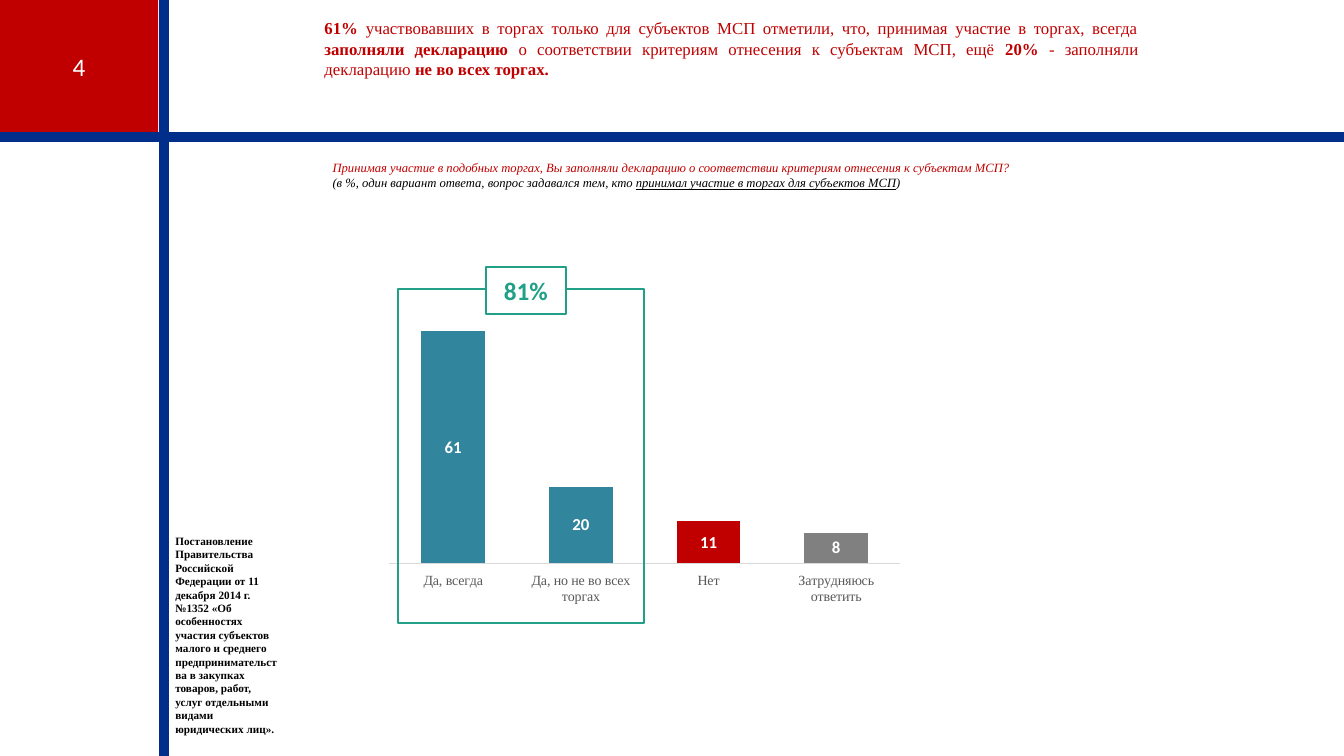
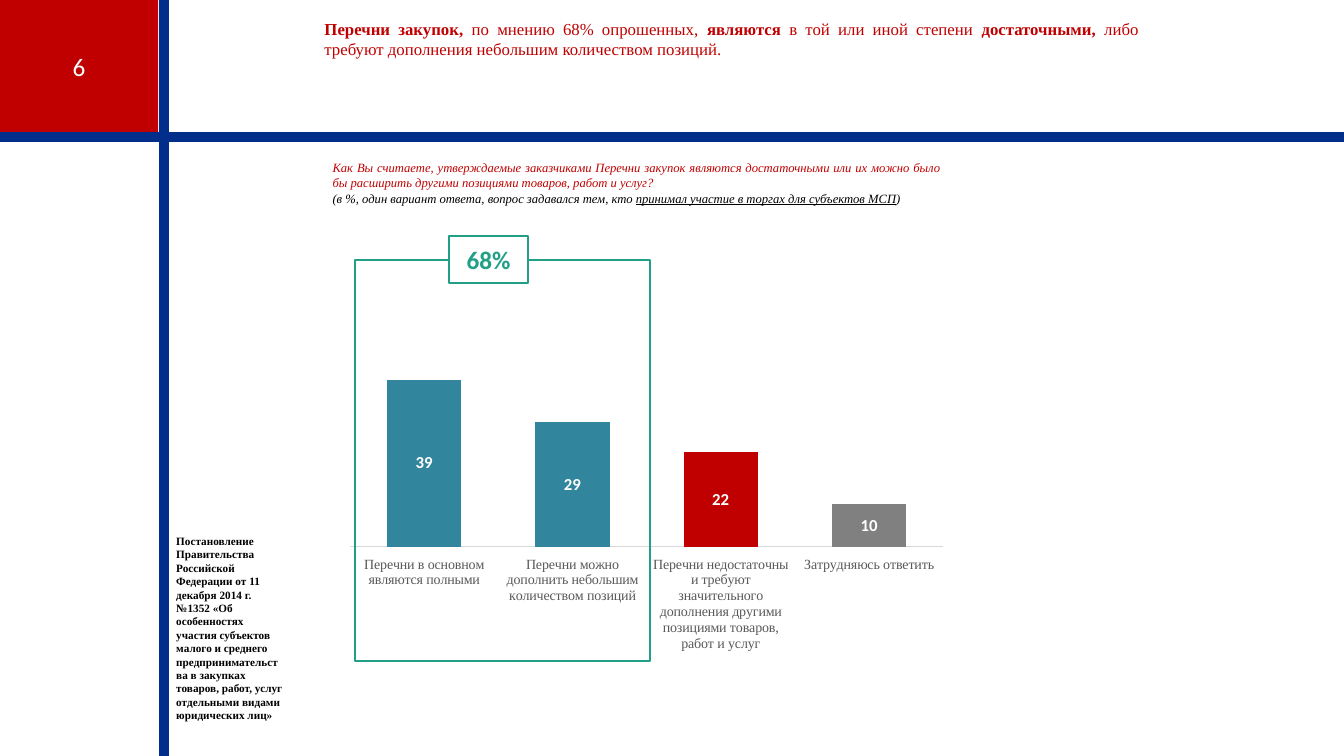
from dataclasses import dataclass
from typing import NamedTuple

from lxml.etree import SubElement
from pptx import Presentation
from pptx.chart.data import CategoryChartData
from pptx.dml.color import RGBColor
from pptx.enum.chart import XL_CHART_TYPE, XL_LABEL_POSITION, XL_TICK_LABEL_POSITION, XL_TICK_MARK
from pptx.enum.shapes import MSO_CONNECTOR, MSO_SHAPE
from pptx.enum.text import MSO_ANCHOR, MSO_AUTO_SIZE, PP_ALIGN
from pptx.oxml.ns import qn
from pptx.util import Inches, Pt


@dataclass(frozen=True)
class Theme:
    red: RGBColor = RGBColor(0xC0, 0x00, 0x00)
    navy: RGBColor = RGBColor(0x00, 0x2E, 0x8A)
    teal: RGBColor = RGBColor(0x31, 0x85, 0x9C)
    gray: RGBColor = RGBColor(0x80, 0x80, 0x80)
    green: RGBColor = RGBColor(0x21, 0x9F, 0x87)
    axis_line: RGBColor = RGBColor(0xD9, 0xD9, 0xD9)
    axis_text: RGBColor = RGBColor(0x59, 0x59, 0x59)
    black: RGBColor = RGBColor(0, 0, 0)
    white: RGBColor = RGBColor(0xFF, 0xFF, 0xFF)
    serif: str = "Times New Roman"
    sans: str = "Calibri"
    large_size: int = 18
    title_size: int = 12
    value_size: int = 12
    chart_size: int = 10
    question_size: int = 9
    source_size: int = 8
    band_width: int = 7
    frame_width: float = 1.5


THEME = Theme()


class Box(NamedTuple):
    left: float
    top: float
    width: float
    height: float


class Run(NamedTuple):
    text: str
    bold: bool = False
    underline: bool = False


class Plot(NamedTuple):
    """Inner plot area as fractions of the chart."""
    x: float
    y: float
    w: float
    h: float


class ChartSpec(NamedTuple):
    box: Box
    plot: Plot
    maximum: int
    answers: dict[str, int]


class Survey(NamedTuple):
    number: str
    title: list[Run]
    title_box: Box
    question: str
    question_box: Box
    chart: ChartSpec
    total: str
    total_frame: Box
    total_badge: Box
    source_box: Box
    source_end: str


SOURCE = (
    "Постановление Правительства Российской Федерации от 11 декабря 2014 г. №1352 "
    "«Об особенностях участия субъектов малого и среднего предпринимательства в закупках "
    "товаров, работ, услуг отдельными видами юридических лиц»"
)
QUESTION_NOTE = [
    Run("(в %, один вариант ответа, вопрос задавался тем, кто "),
    Run("принимал участие в торгах для субъектов МСП", underline=True),
    Run(")"),
]

SURVEYS = [
    Survey(
        number="4",
        title=[
            Run("61% ", bold=True),
            Run("участвовавших в торгах только для субъектов МСП отметили, что, "
                "принимая участие в торгах, всегда "),
            Run("заполняли декларацию ", bold=True),
            Run("о соответствии критериям отнесения к субъектам МСП, ещё "),
            Run("20%", bold=True),
            Run(" - заполняли декларацию "),
            Run("не во всех торгах.", bold=True),
        ],
        title_box=Box(3.12, 0.13, 8.27, 0.71),
        question="Принимая участие в подобных торгах, Вы заполняли декларацию "
                 "о соответствии критериям отнесения к субъектам МСП?",
        question_box=Box(3.2, 1.54, 8.19, 0.4),
        chart=ChartSpec(
            Box(3.82, 2.88, 5.37, 3.31), Plot(0.008, 0.021, 0.943, 0.797), 70,
            {"Да, всегда": 61, "Да, но не во всех торгах": 20,
             "Нет": 11, "Затрудняюсь ответить": 8},
        ),
        total="81%",
        total_frame=Box(3.95, 2.87, 2.44, 3.31),
        total_badge=Box(4.82, 2.65, 0.79, 0.47),
        source_box=Box(1.64, 5.25, 1.22, 2.12),
        source_end=".",
    ),
    Survey(
        number="6",
        title=[
            Run("Перечни закупок, ", bold=True),
            Run("по мнению 68% опрошенных, "),
            Run("являются", bold=True),
            Run(" в той или иной степени "),
            Run("достаточными, ", bold=True),
            Run("либо требуют дополнения небольшим количеством позиций."),
        ],
        title_box=Box(3.12, 0.14, 8.27, 0.5),
        question="Как Вы считаете, утверждаемые заказчиками Перечни закупок являются "
                 "достаточными или их можно было бы расширить другими позициями "
                 "товаров, работ и услуг?",
        question_box=Box(3.2, 1.54, 6.22, 0.56),
        chart=ChartSpec(
            Box(3.44, 3.36, 6.22, 3.43), Plot(0.005, 0.044, 0.946, 0.558), 45,
            {"Перечни в основном являются полными": 39,
             "Перечни можно дополнить небольшим количеством позиций": 29,
             "Перечни недостаточны и требуют значительного дополнения "
             "другими позициями товаров, работ и услуг": 22,
             "Затрудняюсь ответить": 10},
        ),
        total="68%",
        total_frame=Box(3.52, 2.58, 2.93, 3.98),
        total_badge=Box(4.45, 2.34, 0.79, 0.47),
        source_box=Box(1.65, 5.25, 1.26, 2.12),
        source_end="",
    ),
]


def inches(box: Box) -> list[int]:
    return [Inches(length) for length in box]


def set_font(font, size: float, color: RGBColor, name: str, bold: bool = False) -> None:
    font.size, font.name, font.bold = Pt(size), name, bold
    font.color.rgb = color


def write_text(frame, runs: list[Run], *, size: float, color: RGBColor, name: str,
               align=PP_ALIGN.LEFT, italic: bool = False, new_paragraph: bool = False) -> None:
    paragraph = frame.add_paragraph() if new_paragraph else frame.paragraphs[0]
    paragraph.alignment = align
    for item in runs:
        run = paragraph.add_run()
        run.text = item.text
        set_font(run.font, size, color, name, item.bold)
        run.font.italic = italic
        run.font.underline = item.underline


def add_text_frame(slide, box: Box):
    frame = slide.shapes.add_textbox(*inches(box)).text_frame
    frame.word_wrap = True
    frame.auto_size = MSO_AUTO_SIZE.SHAPE_TO_FIT_TEXT
    return frame


def add_rectangle(slide, box: Box, *, fill: RGBColor | None = None,
                  line: RGBColor | None = None):
    shape = slide.shapes.add_shape(MSO_SHAPE.RECTANGLE, *inches(box))
    shape.shadow.inherit = False
    if fill is None:
        shape.fill.background()
    else:
        shape.fill.solid()
        shape.fill.fore_color.rgb = fill
    if line is None:
        shape.line.fill.background()
    else:
        shape.line.color.rgb = line
        shape.line.width = Pt(THEME.frame_width)
    shape.text_frame.vertical_anchor = MSO_ANCHOR.MIDDLE
    return shape


def add_band(slide, x1: float, y1: float, x2: float, y2: float) -> None:
    band = slide.shapes.add_connector(
        MSO_CONNECTOR.STRAIGHT, Inches(x1), Inches(y1), Inches(x2), Inches(y2))
    band.line.color.rgb = THEME.navy
    band.line.width = Pt(THEME.band_width)
    SubElement(band._element.spPr, qn("a:effectLst"))


def add_page_frame(slide, number: str) -> None:
    corner = add_rectangle(slide, Box(0, 0, 1.57, 1.32), fill=THEME.red)
    write_text(corner.text_frame, [Run(number)], size=THEME.large_size,
               color=THEME.white, name=THEME.sans, align=PP_ALIGN.CENTER)
    add_band(slide, 1.63, 0, 1.63, 7.5)
    add_band(slide, 0, 1.36, 13.33, 1.36)


def set_plot_area(chart, plot: Plot) -> None:
    plot_area = chart._chartSpace.chart.plotArea
    layout = plot_area.find(qn("c:layout"))
    if layout is None:
        layout = SubElement(plot_area, qn("c:layout"))
        plot_area.insert(0, layout)
    manual = SubElement(layout, qn("c:manualLayout"))
    settings = {"layoutTarget": "inner", "xMode": "edge", "yMode": "edge", **plot._asdict()}
    for tag, value in settings.items():
        SubElement(manual, qn(f"c:{tag}")).set("val", str(value))


def add_answer_chart(slide, spec: ChartSpec) -> None:
    data = CategoryChartData(number_format="#,##0")
    data.categories = list(spec.answers)
    data.add_series("Series 1", list(spec.answers.values()))
    chart = slide.shapes.add_chart(
        XL_CHART_TYPE.COLUMN_STACKED, *inches(spec.box), data).chart
    chart.has_legend = chart.has_title = False
    set_font(chart.font, THEME.chart_size, THEME.black, THEME.sans)
    set_plot_area(chart, spec.plot)

    # Axes
    value_axis, category_axis = chart.value_axis, chart.category_axis
    value_axis.minimum_scale, value_axis.maximum_scale = 0, spec.maximum
    value_axis.has_major_gridlines = False
    value_axis.visible = False
    category_axis.major_tick_mark = XL_TICK_MARK.NONE
    category_axis.tick_label_position = XL_TICK_LABEL_POSITION.LOW
    category_axis.format.line.color.rgb = THEME.axis_line
    category_axis.format.line.width = Pt(0.75)
    set_font(category_axis.tick_labels.font, THEME.chart_size, THEME.axis_text, THEME.serif)

    # Columns and their values
    columns = chart.plots[0]
    columns.gap_width = columns.overlap = 100
    columns.vary_by_categories = False
    series = columns.series[0]
    for index, color in enumerate((THEME.teal, THEME.teal, THEME.red, THEME.gray)):
        fill = series.points[index].format.fill
        fill.solid()
        fill.fore_color.rgb = color
    labels = series.data_labels
    labels.show_value = True
    labels.position = XL_LABEL_POSITION.CENTER
    labels.number_format, labels.number_format_is_linked = "#,##0", False
    set_font(labels.font, THEME.value_size, THEME.white, THEME.sans, bold=True)


def add_survey_slide(presentation, survey: Survey) -> None:
    slide = presentation.slides.add_slide(presentation.slide_layouts[6])
    add_page_frame(slide, survey.number)

    # Question and finding
    question = add_text_frame(slide, survey.question_box)
    question_format = dict(size=THEME.question_size, name=THEME.serif,
                           align=PP_ALIGN.JUSTIFY, italic=True)
    write_text(question, [Run(survey.question)], color=THEME.red, **question_format)
    write_text(question, QUESTION_NOTE, color=THEME.black, new_paragraph=True,
               **question_format)
    write_text(add_text_frame(slide, survey.title_box), survey.title, size=THEME.title_size,
               color=THEME.red, name=THEME.serif, align=PP_ALIGN.JUSTIFY)

    # Chart with the total of its first two columns
    add_answer_chart(slide, survey.chart)
    add_rectangle(slide, survey.total_frame, line=THEME.green)
    badge = add_rectangle(slide, survey.total_badge, fill=THEME.white, line=THEME.green)
    write_text(badge.text_frame, [Run(survey.total, bold=True)], size=THEME.large_size,
               color=THEME.green, name=THEME.sans, align=PP_ALIGN.CENTER)

    # Legal source
    write_text(add_text_frame(slide, survey.source_box),
               [Run(SOURCE + survey.source_end, bold=True)],
               size=THEME.source_size, color=THEME.black, name=THEME.serif)


def main() -> None:
    presentation = Presentation()
    presentation.slide_width, presentation.slide_height = Inches(13.33), Inches(7.5)
    for survey in SURVEYS:
        add_survey_slide(presentation, survey)
    presentation.save("out.pptx")


if __name__ == "__main__":
    main()
